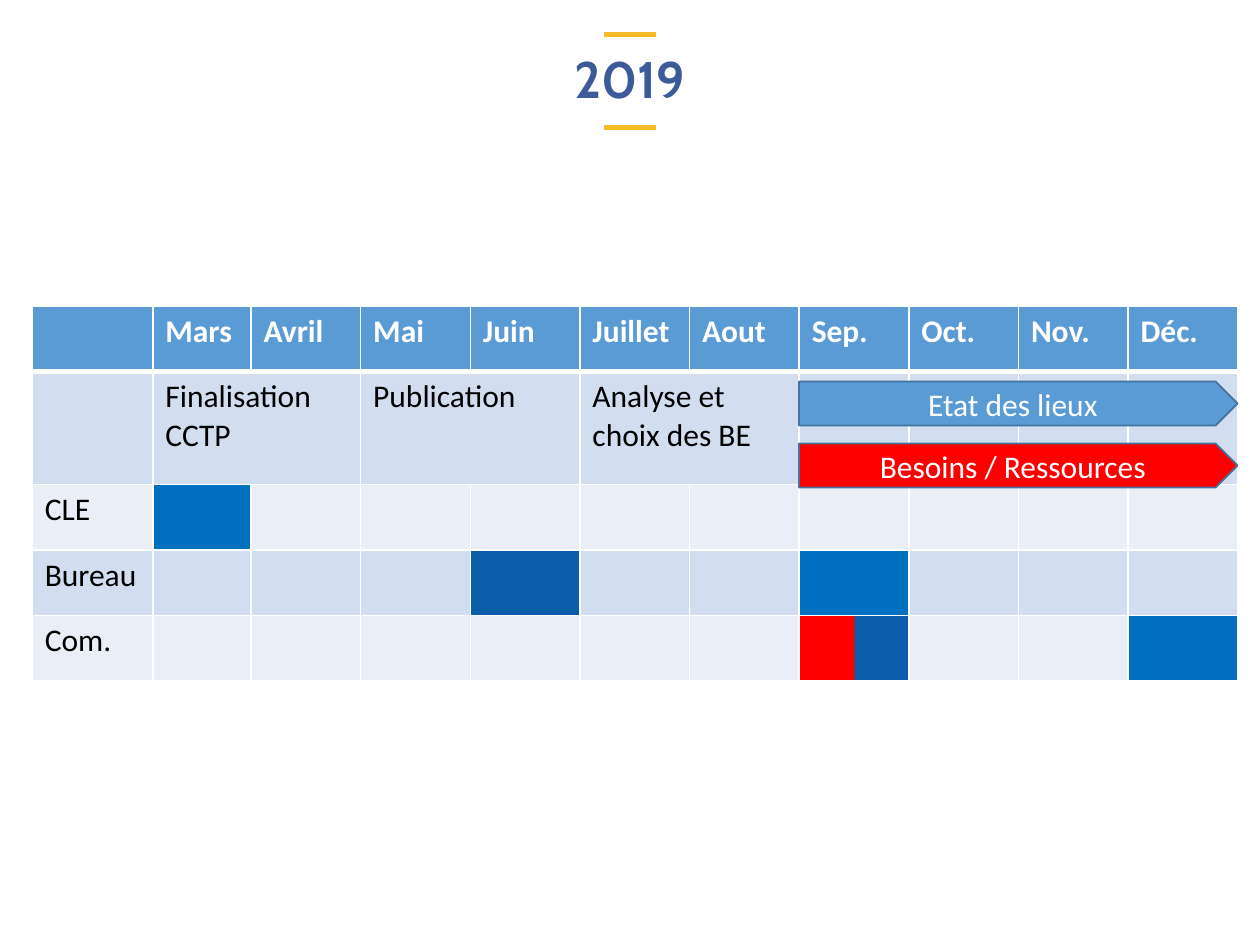
from lxml.etree import SubElement
from pptx import Presentation
from pptx.dml.color import RGBColor
from pptx.enum.shapes import MSO_CONNECTOR, MSO_SHAPE
from pptx.enum.text import MSO_ANCHOR, PP_ALIGN
from pptx.oxml import parse_xml
from pptx.oxml.ns import nsdecls, qn
from pptx.util import Cm, Pt

BLUE, DARK_BLUE, RED = "0070C0", "0B5DAA", "FF0000"
HEADER, BANDS = "5B9BD5", ("EAEFF7", "D2DEEF")
MONTHS = ["Mars", "Avril", "Mai", "Juin", "Juillet", "Aout",
          "Sep.", "Oct.", "Nov.", "Déc."]
LABELS = {2: "CLE", 3: "Bureau", 4: "Com."}
PHASES = {1: "Finalisation CCTP", 3: "Publication", 5: "Analyse et choix des BE"}
MEETINGS = {(2, 1): BLUE, (3, 4): DARK_BLUE, (3, 7): BLUE, (4, 10): BLUE}
SPLIT_CELL = (4, 7)

# Calendar grid, in cm
LABEL_W, MARCH_W, MONTH_W = 2.43, 1.98, 2.21
ROW_HEIGHTS = [1.32, 2.28, 1.32, 1.32, 1.32]


def color(value):
    return RGBColor.from_string(value)


def style_text(p, size, font, value, bold=False):
    p.font.size = Pt(size)
    p.font.name = font
    p.font.bold = bold
    p.font.color.rgb = color(value)


def add_title(s, text, x, y, w, h):
    # Short rules above and below the title
    for rule_y in (y, y + h):
        rule = s.shapes.add_connector(
            MSO_CONNECTOR.STRAIGHT, Cm(x + w / 2 - 0.53), Cm(rule_y),
            Cm(x + w / 2 + 0.53), Cm(rule_y))
        rule.line.color.rgb = color("F6BC25")
        rule.line.width = Pt(2.75)
        SubElement(rule._element.spPr, qn("a:effectLst"))

    # Title text
    tf = s.shapes.add_textbox(Cm(x), Cm(y + 0.2), Cm(w), Cm(h - 0.35)).text_frame
    tf.word_wrap = True
    tf.vertical_anchor = MSO_ANCHOR.MIDDLE
    p = tf.paragraphs[0]
    p.text = text
    p.alignment = PP_ALIGN.CENTER
    p.line_spacing = 0.9
    style_text(p, 29.3, "Cabin", "3D5A99", True)


def set_borders(cell, top, bottom):
    tcPr = cell._tc.get_or_add_tcPr()
    sides = (("L", 1), ("R", 1), ("T", top), ("B", bottom))
    for i, (side, width) in enumerate(sides):
        tcPr.insert(i, parse_xml(
            f'<a:ln{side} {nsdecls("a")} w="{Pt(width)}"><a:solidFill>'
            f'<a:srgbClr val="FFFFFF"/></a:solidFill></a:ln{side}>'))


def split_fill(cell, left, right):
    stops = ((0, left), (50, left), (51, right), (100, right))
    gs = "".join(f'<a:gs pos="{pos * 1000}"><a:srgbClr val="{value}"/></a:gs>'
                 for pos, value in stops)
    cell._tc.get_or_add_tcPr().append(parse_xml(
        f'<a:gradFill {nsdecls("a")}><a:gsLst>{gs}</a:gsLst>'
        '<a:lin ang="0" scaled="0"/></a:gradFill>'))


def cell_text(row, col):
    if row == 0:
        return MONTHS[col - 1] if col else ""
    if col == 0:
        return LABELS.get(row, "")
    return PHASES.get(col, "") if row == 1 else ""


def add_calendar(s, x, y):
    widths = [LABEL_W, MARCH_W] + [MONTH_W] * (len(MONTHS) - 1)
    table = s.shapes.add_table(
        len(ROW_HEIGHTS), len(widths), Cm(x), Cm(y),
        Cm(sum(widths)), Cm(sum(ROW_HEIGHTS))).table
    for column, width in zip(table.columns, widths):
        column.width = Cm(width)
    for row, height in zip(table.rows, ROW_HEIGHTS):
        row.height = Cm(height)

    # Cells: text, fill and borders
    for r in range(len(ROW_HEIGHTS)):
        for c in range(len(widths)):
            cell = table.cell(r, c)
            p = cell.text_frame.paragraphs[0]
            p.text = cell_text(r, c)
            style_text(p, 18, "Calibri", "000000" if r else "FFFFFF", r == 0)
            if (r, c) == SPLIT_CELL:
                split_fill(cell, RED, DARK_BLUE)
            else:
                band = BANDS[r % 2] if r else HEADER
                cell.fill.solid()
                cell.fill.fore_color.rgb = color(MEETINGS.get((r, c), band))
            set_borders(cell, 3 if r == 1 else 1, 3 if r == 0 else 1)

    # Each phase lasts two months
    for c in PHASES:
        table.cell(1, c).merge(table.cell(1, c + 1))


def add_arrow(s, text, fill, x, y, w, h):
    sp = s.shapes.add_shape(MSO_SHAPE.PENTAGON, Cm(x), Cm(y), Cm(w), Cm(h))
    sp.shadow.inherit = False
    sp.fill.solid()
    sp.fill.fore_color.rgb = color(fill)
    sp.line.color.rgb = color("43739E")
    sp.line.width = Pt(1)
    tf = sp.text_frame
    tf.word_wrap = True
    tf.vertical_anchor = MSO_ANCHOR.MIDDLE
    p = tf.paragraphs[0]
    p.text = text
    p.alignment = PP_ALIGN.CENTER
    style_text(p, 18, "Calibri", "FFFFFF")


def add_phase_arrows(s, x, y):
    # From September to the end of December
    left = x + LABEL_W + MARCH_W + 5 * MONTH_W
    arrows = (("Etat des lieux", HEADER), ("Besoins / Ressources", RED))
    for i, (text, fill) in enumerate(arrows):
        add_arrow(s, text, fill, left, y + 1.52 + i * 1.25, 4 * MONTH_W, 0.89)


def main():
    prs = Presentation()
    prs.slide_width, prs.slide_height = Cm(25.4), Cm(19.05)
    s = prs.slides.add_slide(prs.slide_layouts[6])
    add_title(s, "2019", 1.75, 0.69, 21.9, 1.88)
    add_calendar(s, 0.65, 6.17)
    add_phase_arrows(s, 0.65, 6.17)
    prs.save("out.pptx")


if __name__ == "__main__":
    main()
